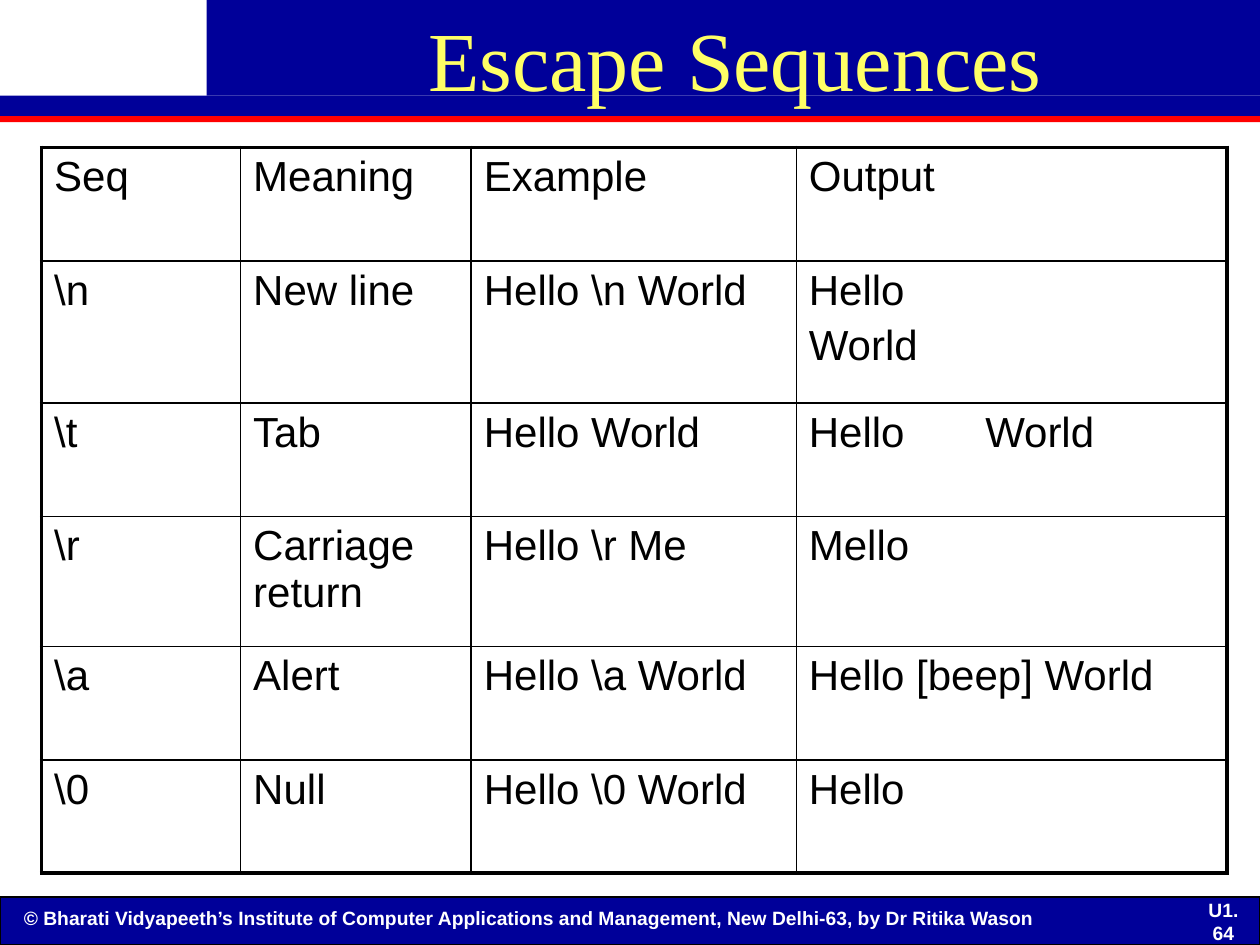
from pptx import Presentation
from pptx.dml.color import RGBColor
from pptx.enum.shapes import MSO_SHAPE
from pptx.enum.text import MSO_ANCHOR, PP_ALIGN
from pptx.oxml import parse_xml
from pptx.oxml.ns import nsdecls
from pptx.util import Inches, Pt

NAVY = RGBColor(0x00, 0x00, 0x99)
RED = RGBColor(0xFF, 0x00, 0x00)
YELLOW = RGBColor(0xFF, 0xFF, 0x66)
WHITE = RGBColor(0xFF, 0xFF, 0xFF)
BLACK = RGBColor(0x00, 0x00, 0x00)

TITLE_FONT = {"name": "Times New Roman", "size": Pt(48)}
FOOTER_FONT = {"name": "Arial", "size": Pt(11), "bold": True}
CELL_FONT = {"name": "Arial", "size": Pt(24)}

COL_WIDTHS = [1.58, 1.83, 2.58, 3.42]
ROW_HEIGHTS = [0.9, 1.13, 0.9, 1.03, 0.9, 0.9]
ROWS = [
    ["Seq", "Meaning", "Example", "Output"],
    ["\\n", "New line", "Hello \\n World", "Hello\nWorld"],
    ["\\t", "Tab", "Hello World", "Hello\tWorld"],
    ["\\r", "Carriage return", "Hello \\r Me", "Mello"],
    ["\\a", "Alert", "Hello \\a World", "Hello [beep] World"],
    ["\\0", "Null", "Hello \\0 World", "Hello"],
]
TAB_STOP = 1.4
OUTER, INNER = 2.25, 1


def format_font(font, values, color):
    for key, value in values.items():
        setattr(font, key, value)
    font.color.rgb = color


def add_bar(slide, box, color, outline=None):
    s = slide.shapes.add_shape(MSO_SHAPE.RECTANGLE, *map(Inches, box))
    s.shadow.inherit = False
    s.fill.solid()
    s.fill.fore_color.rgb = color
    if outline is None:
        s.line.fill.background()
    else:
        s.line.color.rgb = outline
        s.line.width = Pt(0.75)


def add_label(slide, box, text, font, color, align=PP_ALIGN.LEFT,
              anchor=MSO_ANCHOR.MIDDLE):
    tf = slide.shapes.add_textbox(*map(Inches, box)).text_frame
    tf.word_wrap = True
    tf.vertical_anchor = anchor
    p = tf.paragraphs[0]
    p.alignment = align
    r = p.add_run()
    r.text = text
    format_font(r.font, font, color)


def set_borders(cell, widths):
    """Draw the cell's borders; widths are in points, keyed L, R, T, B."""
    tc_pr = cell._tc.get_or_add_tcPr()
    for i, (side, width) in enumerate(widths.items()):
        tc_pr.insert(i, parse_xml(
            f'<a:ln{side} {nsdecls("a")} w="{Pt(width)}"><a:solidFill>'
            f'<a:srgbClr val="{BLACK}"/></a:solidFill></a:ln{side}>'))


def fill_cell(cell, text):
    cell.fill.background()
    tf = cell.text_frame
    for i, line in enumerate(text.split("\n")):
        p = tf.add_paragraph() if i else tf.paragraphs[0]
        if i:
            p.space_before = Pt(4.8)
        if "\t" in line:
            p._p.get_or_add_pPr().append(parse_xml(
                f'<a:tabLst {nsdecls("a")}>'
                f'<a:tab pos="{Inches(TAB_STOP)}" algn="l"/></a:tabLst>'))
        r = p.add_run()
        r.text = line
        format_font(r.font, CELL_FONT, BLACK)


def add_sequence_table(slide, left, top):
    n_rows, n_cols = len(ROWS), len(COL_WIDTHS)
    table = slide.shapes.add_table(
        n_rows, n_cols, Inches(left), Inches(top),
        Inches(sum(COL_WIDTHS)), Inches(sum(ROW_HEIGHTS))).table
    table.first_row = table.horz_banding = False
    for column, width in zip(table.columns, COL_WIDTHS):
        column.width = Inches(width)
    for row, height in zip(table.rows, ROW_HEIGHTS):
        row.height = Inches(height)
    for i, texts in enumerate(ROWS):
        for j, text in enumerate(texts):
            cell = table.cell(i, j)
            fill_cell(cell, text)
            on_edge = {"L": j == 0, "R": j == n_cols - 1,
                       "T": i == 0, "B": i == n_rows - 1}
            set_borders(cell, {side: OUTER if edge else INNER
                               for side, edge in on_edge.items()})


def main():
    prs = Presentation()
    prs.slide_width, prs.slide_height = Inches(10), Inches(7.5)
    slide = prs.slides.add_slide(prs.slide_layouts[6])

    # Footer
    add_bar(slide, (0, 7.12, 10, 0.38), NAVY, BLACK)
    add_label(slide, (0.09, 7.14, 9.18, 0.28),
              "© Bharati Vidyapeeth’s Institute of Computer Applications and "
              "Management, New Delhi-63, by Dr Ritika Wason",
              FOOTER_FONT, WHITE, anchor=MSO_ANCHOR.TOP)
    add_label(slide, (9.45, 7.19, 0.52, 0.24), "U1. 64",
              FOOTER_FONT, WHITE, PP_ALIGN.CENTER)

    # Title band
    add_bar(slide, (0, 0.92, 10, 0.05), RED)
    add_bar(slide, (1.64, 0, 8.36, 0.76), NAVY)
    add_bar(slide, (0, 0.76, 10, 0.16), NAVY)
    add_label(slide, (1.67, 0, 8.33, 0.92), "Escape Sequences",
              TITLE_FONT, YELLOW, PP_ALIGN.CENTER)

    # Escape sequences
    add_sequence_table(slide, 0.33, 1.17)

    prs.save("out.pptx")


if __name__ == "__main__":
    main()
